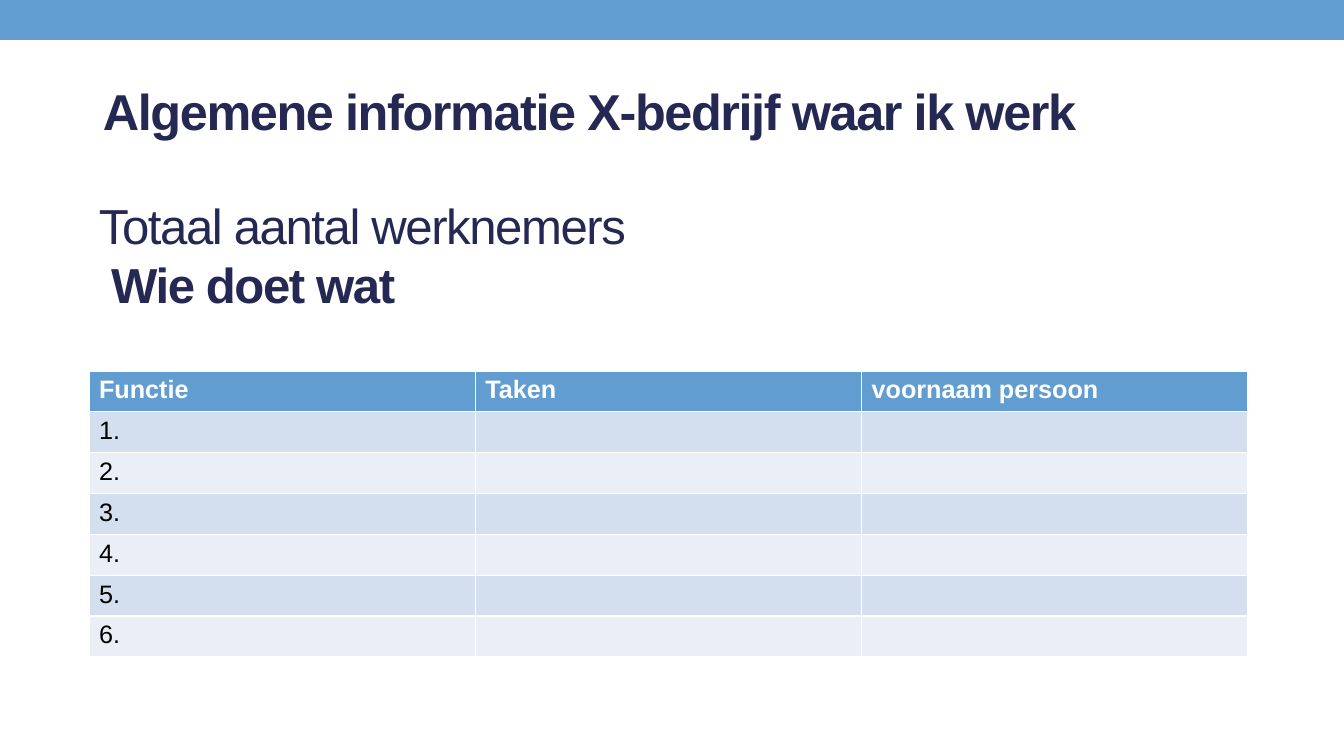
import pptx
import pptx.dml.color
import pptx.enum.shapes
import pptx.enum.text
import pptx.util

PAGE_WIDTH, PAGE_HEIGHT = 1344, 756
SCALE = 12192000 / PAGE_WIDTH
FONT = "Arial"
COLORS = {
    "accent": "629DD1",
    "heading": "242852",
    "header_text": "FFFFFF",
    "body_text": "000000",
    "odd_row": "D3DFEE",
    "even_row": "EAEFF7",
}
HEADERS = ["Functie", "Taken", "voornaam persoon"]
ROW_COUNT = 6


def px(length):
    return pptx.util.Emu(round(length * SCALE))


def color(name):
    return pptx.dml.color.RGBColor.from_string(COLORS[name])


def format_span(span, size, color_name, bold):
    span.font.name = FONT
    span.font.size = pptx.util.Pt(size)
    span.font.bold = bold
    span.font.color.rgb = color(color_name)


def add_top_band(page, box):
    band = page.shapes.add_shape(
        pptx.enum.shapes.MSO_SHAPE.RECTANGLE, *map(px, box))
    band.shadow.inherit = False
    band.fill.solid()
    band.fill.fore_color.rgb = color("accent")
    band.line.fill.background()


def add_heading(page, box, text, size, bold_lines):
    frame = page.shapes.add_textbox(*map(px, box)).text_frame
    frame.word_wrap = True
    frame.vertical_anchor = pptx.enum.text.MSO_ANCHOR.MIDDLE
    para = frame.paragraphs[0]
    para.text = text
    for span, bold in zip(para.runs, bold_lines):
        format_span(span, size, "heading", bold)
        span.font._element.set("spc", "-100")


def fill_cell(cell, text, fill_name, text_color, bold):
    cell.fill.solid()
    cell.fill.fore_color.rgb = color(fill_name)
    cell.text = text
    for span in cell.text_frame.paragraphs[0].runs:
        format_span(span, 18, text_color, bold)


def add_task_table(page, box):
    table = page.shapes.add_table(
        ROW_COUNT + 1, len(HEADERS), *map(px, box)).table
    for column, header in enumerate(HEADERS):
        fill_cell(table.cell(0, column), header, "accent", "header_text", True)
    for row in range(1, ROW_COUNT + 1):
        fill_name = "odd_row" if row % 2 else "even_row"
        for column in range(len(HEADERS)):
            text = f"{row}." if column == 0 else ""
            fill_cell(table.cell(row, column), text, fill_name, "body_text", False)


def build_company_page(deck):
    page = deck.slides.add_slide(deck.slide_layouts[6])
    add_top_band(page, (0, 0, PAGE_WIDTH, 40))
    add_heading(page, (93, 54, 1159, 113),
                "Algemene informatie X-bedrijf waar ik werk", 36, [True])
    add_heading(page, (89, 173, 1210, 163),
                "Totaal aantal werknemers\v Wie doet wat", 35.1, [False, True])
    add_task_table(page, (89, 371, 1159, 286))


def main():
    deck = pptx.Presentation()
    deck.slide_width = px(PAGE_WIDTH)
    deck.slide_height = px(PAGE_HEIGHT)
    build_company_page(deck)
    deck.save("out.pptx")


if __name__ == "__main__":
    main()
